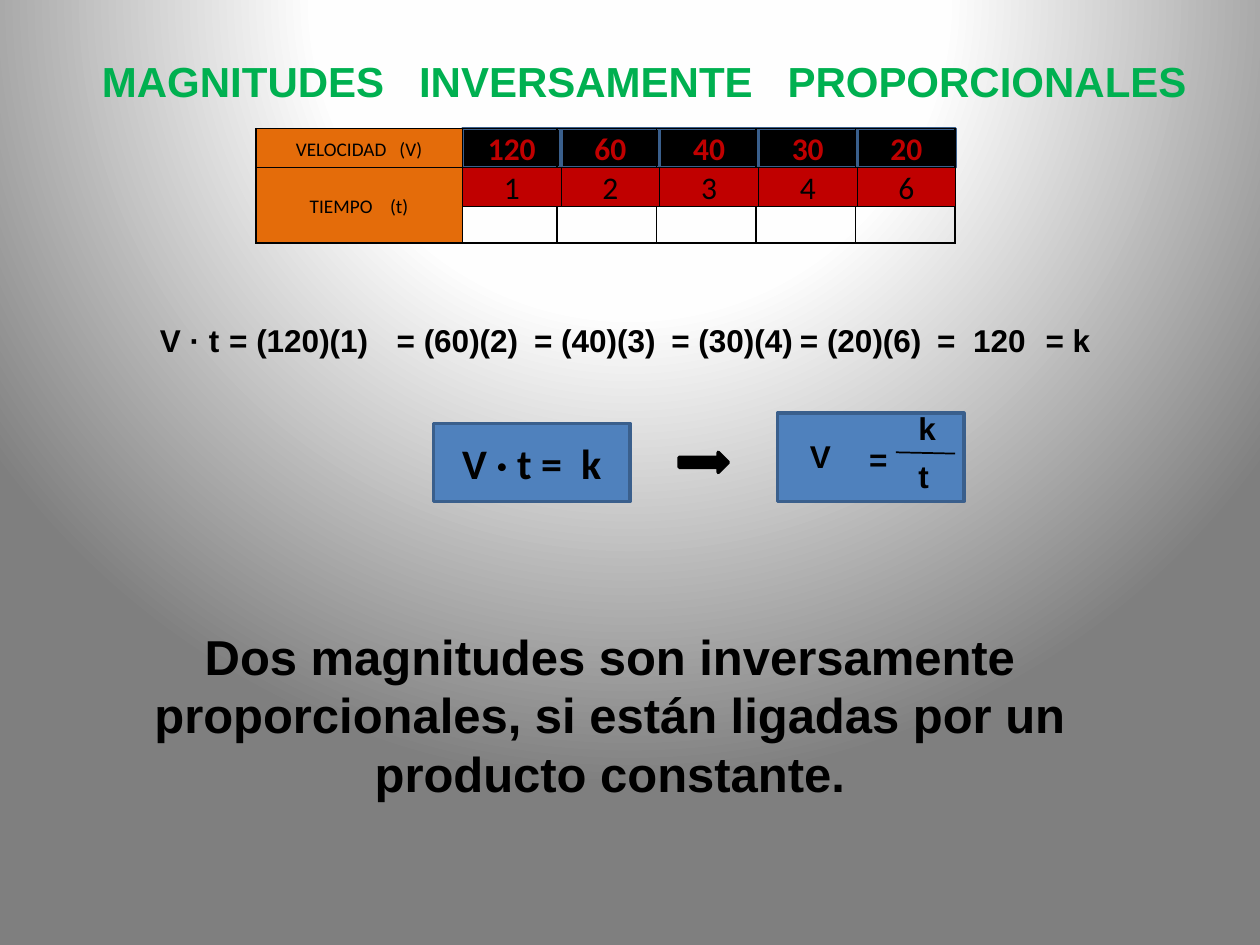
import pptx
import pptx.dml.color
import pptx.enum.shapes
import pptx.enum.text
import pptx.oxml
import pptx.oxml.ns
import pptx.util

Inches = pptx.util.Inches
Shapes = pptx.enum.shapes.MSO_SHAPE
Align = pptx.enum.text.PP_ALIGN
Anchor = pptx.enum.text.MSO_ANCHOR

TITLE = "MAGNITUDES   INVERSAMENTE   PROPORCIONALES"
CONCLUSION = ("Dos magnitudes son inversamente proporcionales, "
              "si están ligadas por un producto constante.")
ROW_LABELS = ["VELOCIDAD   (V)", "TIEMPO    (t)"]
SPEEDS = ["120", "60", "40", "30", "20"]
TIMES = ["1", "2", "3", "4", "6"]
EQUATION = [
    ("V · t", 1.17, 0.78),
    ("= (120)(1)", 1.72, 1.41),
    ("= (60)(2)", 3.05, 1.17),
    ("= (40)(3)", 4.14, 1.17),
    ("= (30)(4)", 5.23, 1.17),
    ("= (20)(6)", 6.25, 1.41),
    ("=  120", 7.34, 0.94),
    ("= k", 8.2, 0.7),
]
FRACTION = [
    ("k", 7.19, 3.2, 0.47),
    ("t", 7.19, 3.58, 0.47),
    ("=", 6.8, 3.44, 0.39),
    ("V", 6.33, 3.42, 0.47),
]
GRADIENT_STOPS = [(0, "FFFFFF"), (40, "FEFEFE"), (100, "7F7F7F")]

BLACK, RED, BLUE, DARK_BLUE = "000000", "C00000", "4F81BD", "3A5F8C"
GREEN, ORANGE = "00B050", "E46C0A"
TABLE_LEFT, TABLE_TOP = 2.03, 1.02
COLUMN_WIDTHS = [1.64, 0.75, 0.79, 0.79, 0.79, 0.79]
ROW_HEIGHTS = [0.31, 0.6]
BOX_LEFT, BOX_PITCH, BOX_HEIGHT = 3.67, 0.783, 0.31

presentation = pptx.Presentation()
presentation.slide_width = Inches(10)
presentation.slide_height = Inches(7.5)
slide = presentation.slides.add_slide(presentation.slide_layouts[6])


def color(value):
    return pptx.dml.color.RGBColor.from_string(value)


def write(frame, text, size, font, ink, bold, align):
    paragraph = frame.paragraphs[0]
    paragraph.text = text
    paragraph.alignment = align
    paragraph.font.size = pptx.util.Pt(size)
    paragraph.font.name = font
    paragraph.font.bold = bold
    paragraph.font.color.rgb = color(ink)
    return paragraph


def add_text(text, left, top, width, height=0.4, size=18, ink=BLACK, align=Align.LEFT):
    box = slide.shapes.add_textbox(Inches(left), Inches(top), Inches(width), Inches(height))
    box.text_frame.word_wrap = True
    box.text_frame.auto_size = pptx.enum.text.MSO_AUTO_SIZE.SHAPE_TO_FIT_TEXT
    write(box.text_frame, text, size, "Arial", ink, True, align)


def add_box(left, top, width, height, fill, line, weight=2, kind=Shapes.RECTANGLE,
            text="", size=18, ink=BLACK, bold=True):
    shape = slide.shapes.add_shape(kind, Inches(left), Inches(top), Inches(width), Inches(height))
    shape.shadow.inherit = False
    shape.fill.solid()
    shape.fill.fore_color.rgb = color(fill)
    shape.line.color.rgb = color(line)
    shape.line.width = pptx.util.Pt(weight)
    if text:
        shape.text_frame.vertical_anchor = Anchor.MIDDLE
        write(shape.text_frame, text, size, "Calibri", ink, bold, Align.CENTER)


def add_number_row(values, top, fill, line, weight, ink, bold):
    for index, value in enumerate(values):
        add_box(BOX_LEFT + index * BOX_PITCH, top, BOX_PITCH, BOX_HEIGHT,
                fill, line, weight, text=value, ink=ink, bold=bold)


def set_background():
    slide.background.fill.solid()
    stops = "".join(f'<a:gs pos="{position * 1000}"><a:srgbClr val="{value}"/></a:gs>'
                    for position, value in GRADIENT_STOPS)
    gradient = pptx.oxml.parse_xml(
        f'<a:gradFill {pptx.oxml.ns.nsdecls("a")} rotWithShape="1"><a:gsLst>{stops}</a:gsLst>'
        '<a:path path="circle"><a:fillToRect l="50000" t="-80000" r="50000" b="180000"/>'
        '</a:path></a:gradFill>')
    solid = slide.element.xpath(".//p:bgPr/a:solidFill")[0]
    solid.getparent().replace(solid, gradient)


def add_borders(cell):
    properties = cell._tc.get_or_add_tcPr()
    for index, side in enumerate(("lnL", "lnR", "lnT", "lnB")):
        properties.insert(index, pptx.oxml.parse_xml(
            f'<a:{side} {pptx.oxml.ns.nsdecls("a")} w="12700"><a:solidFill>'
            f'<a:srgbClr val="{BLACK}"/></a:solidFill></a:{side}>'))


def add_magnitude_table():
    table = slide.shapes.add_table(
        len(ROW_HEIGHTS), len(COLUMN_WIDTHS), Inches(TABLE_LEFT), Inches(TABLE_TOP),
        Inches(sum(COLUMN_WIDTHS)), Inches(sum(ROW_HEIGHTS))).table
    table.first_row = table.horz_banding = False
    for column, width in zip(table.columns, COLUMN_WIDTHS):
        column.width = Inches(width)
    for row, height, label in zip(table.rows, ROW_HEIGHTS, ROW_LABELS):
        row.height = Inches(height)
        for index, cell in enumerate(row.cells):
            cell.margin_left = cell.margin_right = Inches(0.07)
            cell.margin_top = cell.margin_bottom = 0
            cell.vertical_anchor = Anchor.MIDDLE
            if index == 0:
                cell.fill.solid()
                cell.fill.fore_color.rgb = color(ORANGE)
                paragraph = write(cell.text_frame, label, 11, "Calibri", BLACK, False, Align.CENTER)
                paragraph.line_spacing = 1.15
            else:
                cell.fill.background()
            add_borders(cell)


def add_fraction_bar():
    bar = slide.shapes.add_connector(pptx.enum.shapes.MSO_CONNECTOR.STRAIGHT,
                                     Inches(7.11), Inches(3.59), Inches(7.58), Inches(3.6))
    bar.line.color.rgb = color(BLACK)
    bar.line.width = pptx.util.Pt(1)
    bar._element.spPr.append(
        pptx.oxml.parse_xml(f'<a:effectLst {pptx.oxml.ns.nsdecls("a")}/>'))


set_background()
add_box(6.17, 3.28, 1.48, 0.7, BLUE, DARK_BLUE)
for text, left, top, width in FRACTION:
    add_text(text, left, top, width)
add_fraction_bar()
add_box(5.39, 3.59, 0.39, 0.16, BLACK, BLACK, kind=Shapes.RIGHT_ARROW)
add_box(3.44, 3.36, 1.56, 0.62, BLUE, DARK_BLUE, text="V · t =  k", size=24)
add_text(CONCLUSION, 0.62, 4.92, 8.44, 1.51, 28, align=Align.CENTER)
add_text(TITLE, 0.7, 0.39, 8.83, 0.5, 24, GREEN, Align.CENTER)
add_number_row(SPEEDS, TABLE_TOP, BLACK, DARK_BLUE, 2, RED, True)
add_magnitude_table()
add_number_row(TIMES, TABLE_TOP + BOX_HEIGHT, RED, BLACK, 0.25, BLACK, False)
for text, left, width in EQUATION:
    add_text(text, left, 2.5, width)

presentation.save("out.pptx")
